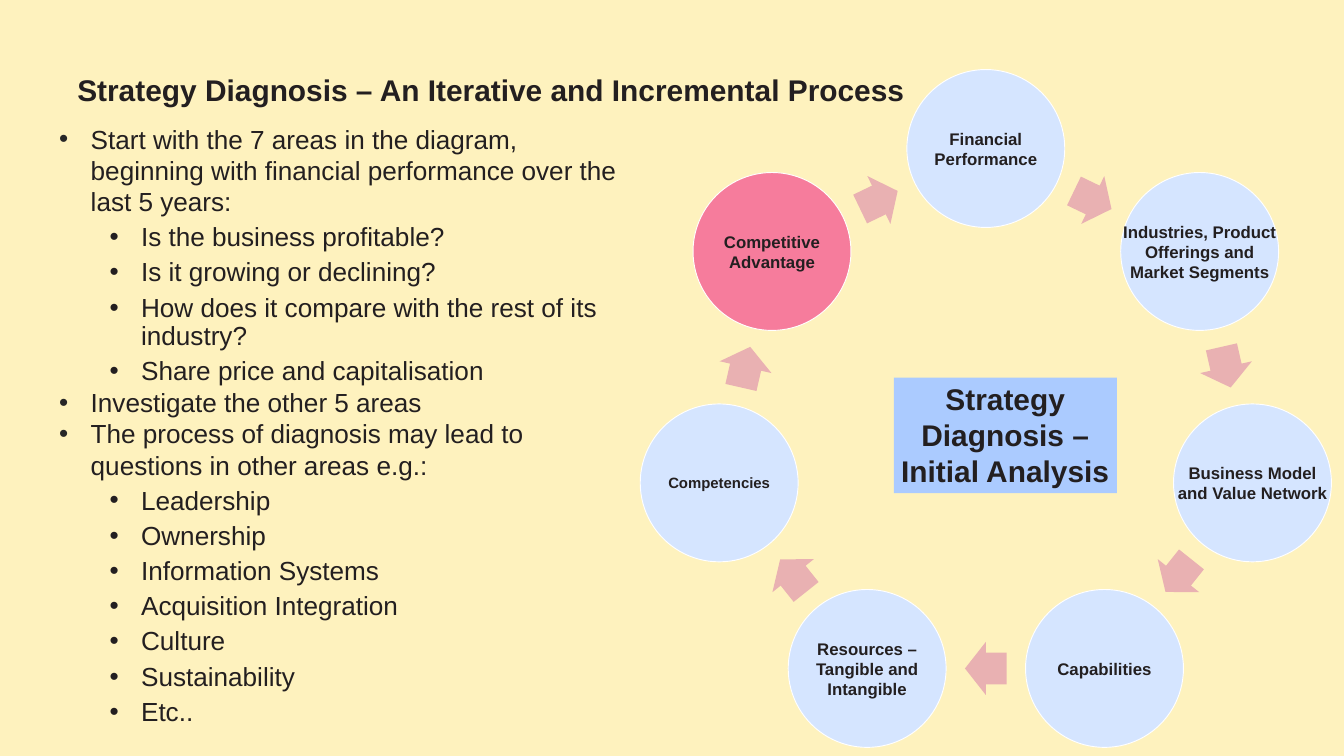
"""Build the strategy diagnosis slide: nested bullets beside a seven-step cycle."""
from math import cos, pi, sin

from lxml.etree import SubElement
from pptx import Presentation
from pptx.dml.color import RGBColor
from pptx.enum.shapes import MSO_SHAPE as SHAPE
from pptx.enum.text import MSO_ANCHOR as ANCHOR, MSO_AUTO_SIZE as FIT, PP_ALIGN as ALIGN
from pptx.oxml.ns import qn
from pptx.util import Inches, Pt

INK = "231F20"
QUESTIONS = [
    (0, "Start with the 7 areas in the diagram, beginning with financial performance over the last 5 years:"),
    (1, "Is the business profitable?"),
    (1, "Is it growing or declining?"),
    (1, "How does it compare with the rest of its industry?"),
    (1, "Share price and capitalisation"),
    (0, "Investigate the other 5 areas"),
    (0, "The process of diagnosis may lead to questions in other areas e.g.:"),
    (1, "Leadership"),
    (1, "Ownership"),
    (1, "Information Systems"),
    (1, "Acquisition Integration"),
    (1, "Culture"),
    (1, "Sustainability"),
    (1, "Etc.."),
]
AREAS = [
    ("Financial Performance", 18, "D5E5FF"),
    ("Industries, Product Offerings and Market Segments", 18, "D5E5FF"),
    ("Business Model and Value Network", 18, "D5E5FF"),
    ("Capabilities", 18, "D5E5FF"),
    ("Resources – Tangible and Intangible", 18, "D5E5FF"),
    ("Competencies", 16, "D5E5FF"),
    ("Competitive Advantage", 18, "F67C9C"),
]


def tint(fill, colour):
    fill.solid()
    fill.fore_color.rgb = RGBColor.from_string(colour)


def style(paragraph, size, bold, align):
    paragraph.alignment = align
    for run in paragraph.runs:
        run.font.name = "Arial"
        run.font.size = Pt(size)
        run.font.bold = bold
        tint(run.font.fill, INK)


deck = Presentation()
deck.slide_width, deck.slide_height = Inches(20), Inches(11.25)
cell = deck.slide_width // 20
slide = deck.slides.add_slide(deck.slide_layouts[0])
tint(slide.background.fill, "FEF2BE")

heading, diagnosis = slide.placeholders
heading.left, heading.top = int(1.05 * cell), int(1.04 * cell)
heading.width, heading.height = int(17.84 * cell), int(0.62 * cell)
heading.text_frame.text = "Strategy Diagnosis – An Iterative and Incremental Process"
heading.text_frame.vertical_anchor = ANCHOR.BOTTOM
heading.text_frame.auto_size = FIT.NONE
heading.text_frame.paragraphs[0].line_spacing = 0.9
style(heading.text_frame.paragraphs[0], 32, True, ALIGN.LEFT)

diagnosis.left, diagnosis.top = int(0.78 * cell), int(1.78 * cell)
diagnosis.width, diagnosis.height = int(8.58 * cell), int(8.98 * cell)
diagnosis.text_frame.text = "\n".join(question for _, question in QUESTIONS)
diagnosis.text_frame.vertical_anchor = ANCHOR.TOP
diagnosis.text_frame.auto_size = FIT.NONE
for paragraph, (level, _) in zip(diagnosis.text_frame.paragraphs, QUESTIONS):
    paragraph.level = level
    paragraph.line_spacing = 0.9 if level else 1.0
    paragraph.space_before = Pt(7.5 * level)
    properties = paragraph._p.get_or_add_pPr()
    properties.set("marL", str(int((0.47 + 0.75 * level) * cell)))
    properties.set("indent", str(int(-0.47 * cell)))
    bullet_colour = SubElement(properties, qn("a:buClr"))
    SubElement(bullet_colour, qn("a:srgbClr"), val=INK if level else "272727")
    SubElement(properties, qn("a:buFont"), typeface="Arial")
    SubElement(properties, qn("a:buChar"), char="•")
    style(paragraph, 28, False, ALIGN.LEFT)

cycle = slide.shapes.add_group_shape().shapes
centre_x, centre_y, radius = 14.67 * cell, 6.28 * cell, 4.07 * cell
disc = int(2.35 * cell)
arrow_length, arrow_width = int(0.62 * cell), int(0.79 * cell)
step = 2 * pi / len(AREAS)
for index, (area, size, colour) in enumerate(AREAS):
    angle = index * step
    left = int(centre_x + radius * sin(angle) - disc / 2)
    top = int(centre_y - radius * cos(angle) - disc / 2)
    circle = cycle.add_shape(SHAPE.OVAL, left, top, disc, disc)
    circle.shadow.inherit = False
    tint(circle.fill, colour)
    tint(circle.line.fill, "FFFFFF")
    circle.line.width = Pt(1)

    label = cycle.add_textbox(left, top, disc, disc).text_frame
    label.word_wrap = True
    label.vertical_anchor = ANCHOR.MIDDLE
    label.margin_left = label.margin_right = label.margin_top = label.margin_bottom = int(0.03 * cell)
    label.text = area
    style(label.paragraphs[0], size, True, ALIGN.CENTER)

    halfway = angle + step / 2
    reach = radius * cos(step / 2)
    arrow = cycle.add_shape(
        SHAPE.RIGHT_ARROW,
        int(centre_x + reach * sin(halfway) - arrow_length / 2),
        int(centre_y - reach * cos(halfway) - arrow_width / 2),
        arrow_length, arrow_width)
    arrow.adjustments[0], arrow.adjustments[1] = 0.6, 0.5
    arrow.rotation = halfway * 180 / pi
    arrow.shadow.inherit = False
    tint(arrow.fill, "E9B1B2")
    arrow.line.fill.background()

core = slide.shapes.add_shape(
    SHAPE.RECTANGLE, int(13.3 * cell), int(5.62 * cell), int(3.32 * cell), int(1.72 * cell))
core.shadow.inherit = False
tint(core.fill, "ABCBFF")
core.line.fill.background()
core.text_frame.word_wrap = False
core.text_frame.auto_size = FIT.SHAPE_TO_FIT_TEXT
core.text_frame.vertical_anchor = ANCHOR.TOP
core.text_frame.text = "Strategy\nDiagnosis –\nInitial Analysis"
for paragraph in core.text_frame.paragraphs:
    style(paragraph, 32, True, ALIGN.CENTER)

deck.save("out.pptx")
